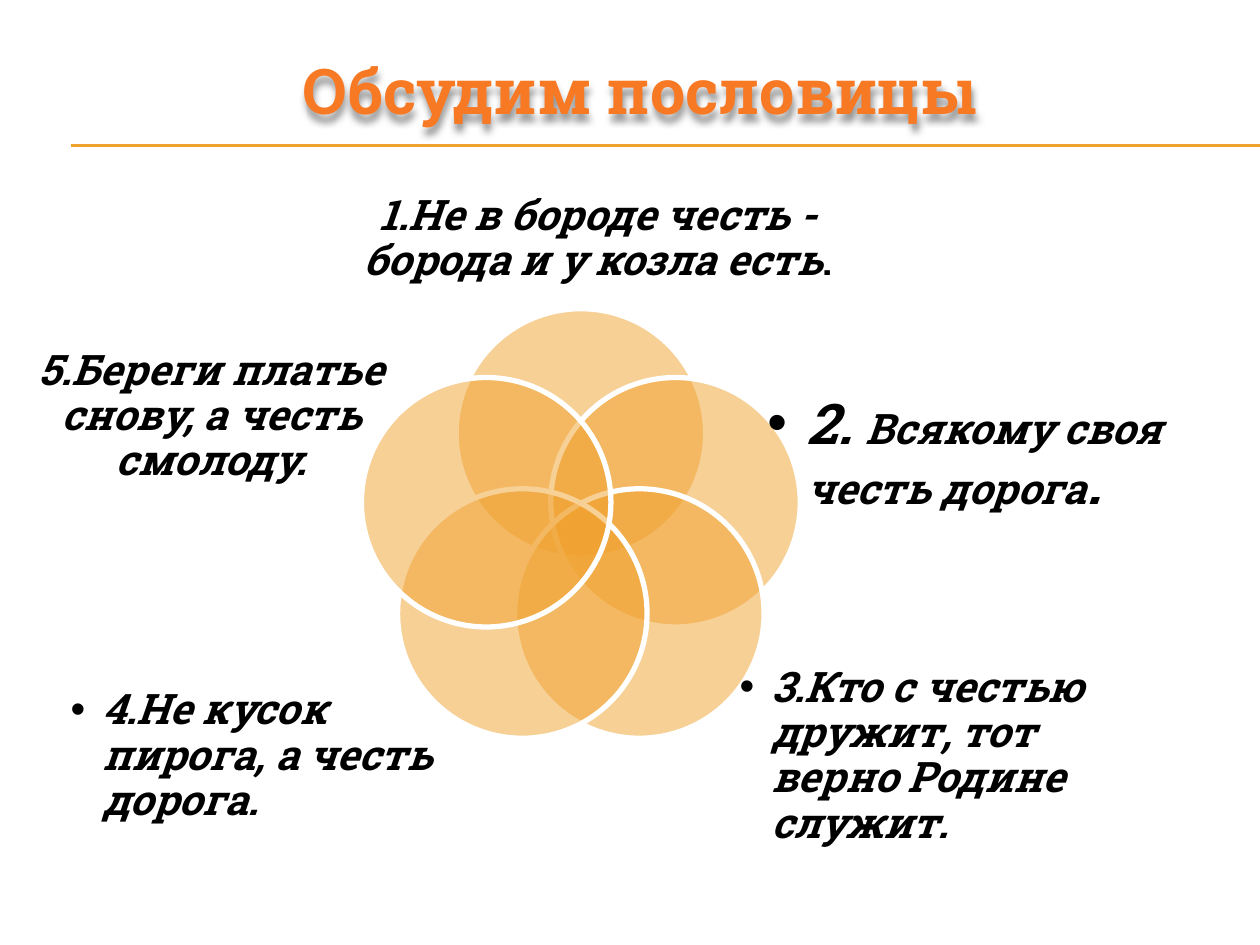
from math import cos, sin, radians
from lxml.etree import SubElement
from pptx import Presentation
from pptx.dml.color import RGBColor
from pptx.enum.shapes import MSO_CONNECTOR as CONN, MSO_SHAPE as SHAPE
from pptx.enum.text import MSO_ANCHOR as ANCHOR, PP_ALIGN as ALIGN
from pptx.oxml.ns import qn
from pptx.util import Inches, Pt

# Content
TITLE = "Обсудим пословицы"
# box (left, top, width, height), left and top insets, bullet indent (0 = centred), runs (text, format)
PROVERBS = [
    ((2.44, 1.56, 4.61, 0.68), (0, 0), 0,
     [("1.Не в бороде честь - борода и у козла есть", {}), (".", {"size": Pt(22), "italic": False})]),
    ((5.61, 2.69, 4.09, 1.35), (0.48, 0.51), 0.31,
     [("2. ", {"size": Pt(32)}), ("Всякому своя честь дорога", {}), (".", {"size": Pt(32)})]),
    ((5.7, 5.05, 3.07, 1.45), (0.17, 0.46), 0.25,
     [("3.Кто с честью дружит, тот верно Родине служит.", {})]),
    ((0.35, 5.05, 3.29, 1.45), (0.21, 0.46), 0.25,
     [("4.Не кусок пирога, а честь дорога.", {})]),
    ((0.3, 1.63, 2.75, 3.36), (0, 0), 0,
     [("5.Береги платье снову, а честь смолоду.", {})]),
]
FONT, GOLD, ORANGE, WHITE, BLACK = "Roboto Slab", "F0A22E", "F87924", "FFFFFF", "000000"
CENTER_X, CENTER_Y, ORBIT, DIAMETER = 4.61, 4.23, 0.79, 1.98
BODY = {"name": FONT, "size": Pt(24), "bold": True, "italic": True}


def color(hex_text):
    return RGBColor.from_string(hex_text)


def add_run(p, text, fmt, hex_text):
    r = p.add_run()
    r.text = text
    for key, value in fmt.items():
        setattr(r.font, key, value)
    r.font.color.rgb = color(hex_text)


def add_text(s, box, insets=(0, 0)):
    sp = s.shapes.add_textbox(*map(Inches, box))
    tf = sp.text_frame
    left, top = map(Inches, insets)
    frame = {"word_wrap": True, "vertical_anchor": ANCHOR.MIDDLE, "margin_left": left,
             "margin_right": 0, "margin_top": top, "margin_bottom": 0}
    for key, value in frame.items():
        setattr(tf, key, value)
    return sp, tf.paragraphs[0]


def add_bullet(p, indent):
    pPr = p._p.get_or_add_pPr()
    pPr.set("marL", str(Inches(indent)))
    pPr.set("indent", str(-Inches(indent)))
    SubElement(pPr, qn("a:buFont"), typeface="Arial")
    SubElement(pPr, qn("a:buChar"), char="•")


def add_rule(s, y):
    line = s.shapes.add_connector(CONN.STRAIGHT, Inches(0.56), Inches(y), Inches(10), Inches(y))
    line.line.color.rgb = color(GOLD)
    line.line.width = Pt(0.75)
    SubElement(line._element.spPr, qn("a:effectLst"))


def add_circle(s, index):
    angle = radians(72 * index)
    left = CENTER_X + ORBIT * sin(angle) - DIAMETER / 2
    top = CENTER_Y - ORBIT * cos(angle) - DIAMETER / 2
    sp = s.shapes.add_shape(SHAPE.OVAL, *map(Inches, (left, top, DIAMETER, DIAMETER)))
    sp.shadow.inherit = False
    sp.fill.solid()
    sp.fill.fore_color.rgb = color(GOLD)
    fill = sp._element.spPr.find(qn("a:solidFill"))
    SubElement(fill[0], qn("a:alpha"), val="50000")
    sp.line.color.rgb = color(WHITE)
    sp.line.width = Pt(3)


def add_proverb(s, box, insets, indent, runs):
    sp, p = add_text(s, box, insets)
    p.line_spacing = 0.9
    if indent:
        add_bullet(p, indent)
    else:
        p.alignment = ALIGN.CENTER
    for text, changes in runs:
        add_run(p, text, BODY | changes, BLACK)


def add_title(s):
    sp, p = add_text(s, (0.33, 0, 9.5, 1.42))
    p.alignment = ALIGN.CENTER
    add_run(p, TITLE, {"name": FONT, "size": Pt(36), "bold": True}, ORANGE)
    # Soft shadow below the letters
    effects = SubElement(sp._element.spPr, qn("a:effectLst"))
    shadow = SubElement(effects, qn("a:outerShdw"), blurRad=str(Pt(4)), dist=str(Pt(4)),
                        dir="5400000", algn="tl", rotWithShape="0")
    shade = SubElement(shadow, qn("a:srgbClr"), val=BLACK)
    SubElement(shade, qn("a:alpha"), val="40000")


def main():
    prs = Presentation()
    prs.slide_width, prs.slide_height = Inches(10), Inches(7.5)
    s = prs.slides.add_slide(prs.slide_layouts[6])
    for y in (1.15, 1.16):
        add_rule(s, y)
    add_title(s)
    # Ring of circles, each with its proverb
    for index, proverb in enumerate(PROVERBS):
        add_circle(s, index)
        add_proverb(s, *proverb)
    prs.save("out.pptx")


if __name__ == "__main__":
    main()
